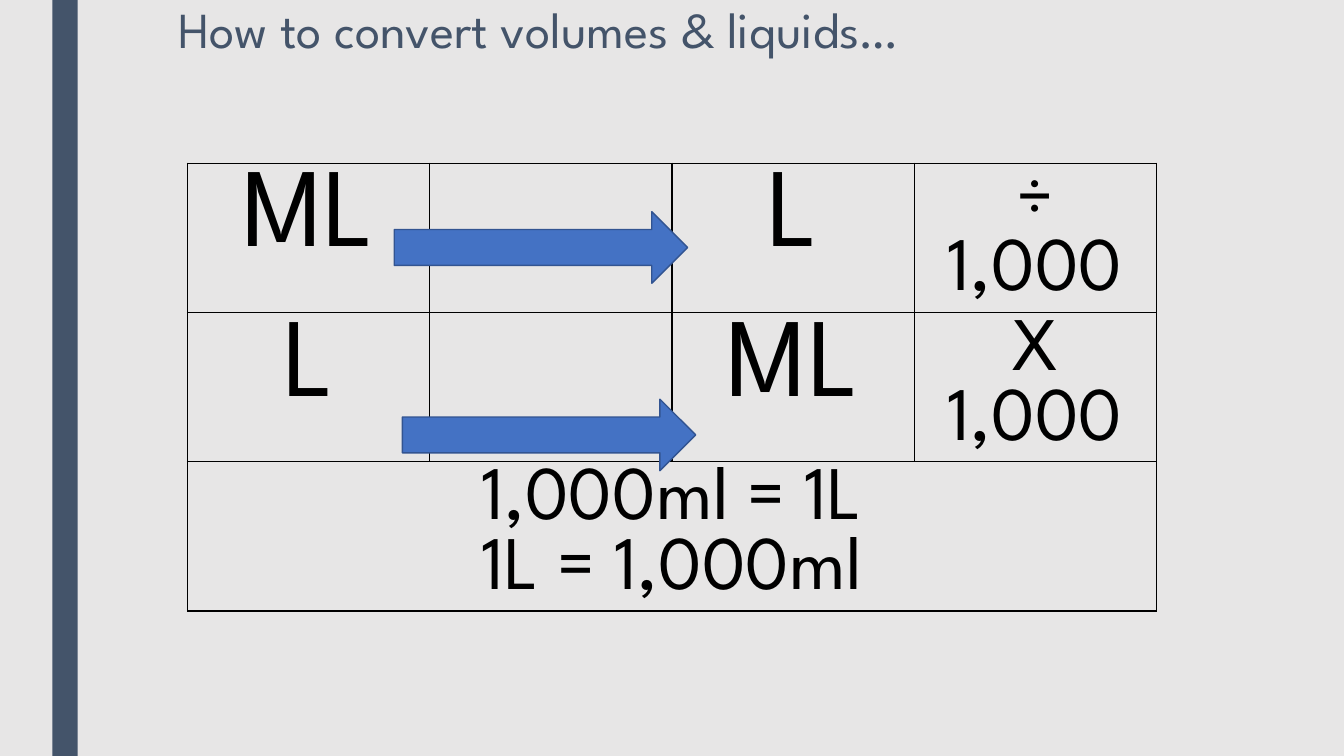
import pptx
import pptx.dml.color
import pptx.enum.shapes
import pptx.enum.text
import pptx.oxml
import pptx.oxml.ns
import pptx.util

PX = 9144  # 100 px to the inch
FONT = "League Spartan"
BLACK, SLATE, PALE = "000000", "44546A", "E7E6E6"
BLUE, DARK_BLUE = "4472C4", "325491"
LETTER_SIZE, NUMBER_SIZE = 80, 54

CONVERSIONS = [
    ("ML", "", "L", "÷ 1,000"),
    ("L", "", "ML", "X 1,000"),
]
EQUALITIES = "1,000ml = 1L\n1L = 1,000ml"


def px(length):
    return pptx.util.Emu(length * PX)


def rgb(colour):
    return pptx.dml.color.RGBColor.from_string(colour)


def style_text(frame, size, colour, align):
    for paragraph in frame.paragraphs:
        paragraph.alignment = align
        for run in paragraph.runs:
            run.font.name = FONT
            run.font.size = pptx.util.Pt(size)
            run.font.color.rgb = rgb(colour)


def add_block(slide, preset, box, fill, outline=None):
    """Add a filled preset shape, outlined only if a colour is given."""
    block = slide.shapes.add_shape(preset, *map(px, box))
    block.shadow.inherit = False
    block.fill.solid()
    block.fill.fore_color.rgb = rgb(fill)
    if outline:
        block.line.color.rgb = rgb(outline)
        block.line.width = pptx.util.Pt(1)
    else:
        block.line.fill.background()


def set_title(slide, text):
    title = slide.shapes.title
    title.left, title.top, title.width, title.height = map(px, (167, 0, 1000, 125))
    frame = title.text_frame
    frame.text = text
    frame.word_wrap = True
    frame.auto_size = pptx.enum.text.MSO_AUTO_SIZE.NONE
    frame.vertical_anchor = pptx.enum.text.MSO_ANCHOR.TOP
    frame.paragraphs[0].line_spacing = 0.89
    style_text(frame, 36, SLATE, pptx.enum.text.PP_ALIGN.LEFT)


def border_cell(cell):
    properties = cell._tc.get_or_add_tcPr()
    for position, side in enumerate(("lnL", "lnR", "lnT", "lnB")):
        properties.insert(position, pptx.oxml.parse_xml(
            f'<a:{side} {pptx.oxml.ns.nsdecls("a")} w="12700"><a:solidFill>'
            f'<a:srgbClr val="{BLACK}"/></a:solidFill></a:{side}>'))


def fill_cell(cell, text, size):
    cell.text_frame.text = text
    style_text(cell.text_frame, size, BLACK, pptx.enum.text.PP_ALIGN.CENTER)


def add_conversion_table(slide):
    columns, row_height = 4, 148
    rows = len(CONVERSIONS) + 1
    table = slide.shapes.add_table(
        rows, columns, px(186), px(162), px(961), px(rows * row_height)).table
    table.first_row = False
    table.horz_banding = False
    for cell in table.iter_cells():
        cell.fill.background()
        border_cell(cell)
    for row, conversion in enumerate(CONVERSIONS):
        for column, text in enumerate(conversion):
            size = NUMBER_SIZE if column == columns - 1 else LETTER_SIZE
            fill_cell(table.cell(row, column), text, size)
    summary = table.cell(rows - 1, 0)
    summary.merge(table.cell(rows - 1, columns - 1))
    fill_cell(summary, EQUALITIES, NUMBER_SIZE)


def main():
    deck = pptx.Presentation()
    deck.slide_width, deck.slide_height = px(1333), px(750)
    slide = deck.slides.add_slide(deck.slide_layouts.get_by_name("Title Only"))
    slide.background.fill.solid()
    slide.background.fill.fore_color.rgb = rgb(PALE)

    presets = pptx.enum.shapes.MSO_SHAPE
    add_block(slide, presets.RECTANGLE, (52, 0, 25, 750), SLATE)
    set_title(slide, "How to convert volumes & liquids…")
    add_conversion_table(slide)
    for left, top in ((391, 210), (399, 396)):
        add_block(slide, presets.RIGHT_ARROW, (left, top, 291, 71), BLUE, DARK_BLUE)
    deck.save("out.pptx")


if __name__ == "__main__":
    main()
